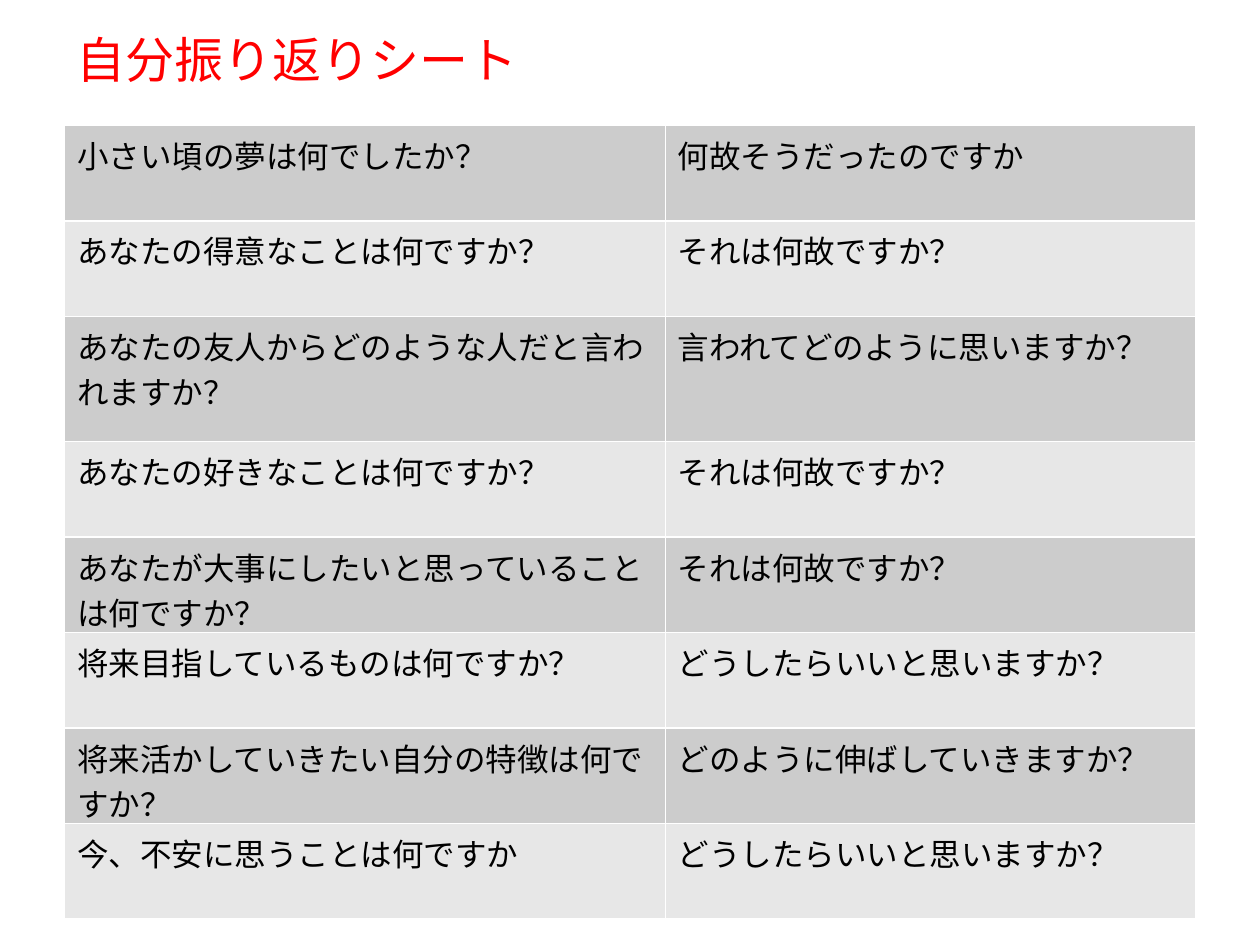
from dataclasses import dataclass

from pptx import Presentation
from pptx.dml.color import RGBColor
from pptx.enum.text import MSO_AUTO_SIZE
from pptx.util import Cm, Pt

GROW = MSO_AUTO_SIZE.SHAPE_TO_FIT_TEXT


@dataclass(frozen=True)
class Theme:
    red: str = "FF0000"
    ink: str = "000000"
    bands: tuple = ("CCCCCC", "E7E7E7")
    head: int = 28
    body: int = 18
    face: str = "Noto Sans CJK JP"
    text: str = "Calibri"


THEME = Theme()
ROWS = [
    ("小さい頃の夢は何でしたか？", "何故そうだったのですか"),
    ("あなたの得意なことは何ですか？", "それは何故ですか？"),
    ("あなたの友人からどのような人だと言われますか？", "言われてどのように思いますか？"),
    ("あなたの好きなことは何ですか？", "それは何故ですか？"),
    ("あなたが大事にしたいと思っていることは何ですか？", "それは何故ですか？"),
    ("将来目指しているものは何ですか？", "どうしたらいいと思いますか？"),
    ("将来活かしていきたい自分の特徴は何ですか？", "どのように伸ばしていきますか？"),
    ("今、不安に思うことは何ですか", "どうしたらいいと思いますか？"),
]
TALL = 2
EXTRA = 0.6
SPLIT = 0.531


def write(frame, text, size, color, face):
    line = frame.paragraphs[0]
    line.text = text
    font = line.font
    font.size = Pt(size)
    font.name = face
    font.color.rgb = RGBColor.from_string(color)


def add_title(slide, left, top, width, height):
    box = slide.shapes.add_textbox(Cm(left), Cm(top), Cm(width), Cm(height))
    frame = box.text_frame
    frame.word_wrap = True
    frame.auto_size = GROW
    write(frame, "自分振り返りシート", THEME.head, THEME.red, THEME.face)


def add_sheet(slide, left, top, width, height):
    shape = slide.shapes.add_table(
        len(ROWS), 2, Cm(left), Cm(top), Cm(width), Cm(height))
    table = shape.table
    table.first_row = False
    for col, share in zip(table.columns, (SPLIT, 1 - SPLIT)):
        col.width = Cm(width * share)
    base = (height - EXTRA) / len(ROWS)
    for i, texts in enumerate(ROWS):
        table.rows[i].height = Cm(base + EXTRA * (i == TALL))
        for j, text in enumerate(texts):
            cell = table.cell(i, j)
            cell.fill.solid()
            cell.fill.fore_color.rgb = RGBColor.from_string(THEME.bands[i % 2])
            write(cell.text_frame, text, THEME.body, THEME.ink, THEME.text)


def main():
    deck = Presentation()
    deck.slide_width, deck.slide_height = Cm(25.4), Cm(19.05)
    slide = deck.slides.add_slide(deck.slide_layouts[6])
    add_title(slide, 1.3, 0.48, 15.6, 1.45)
    add_sheet(slide, 1.3, 2.53, 22.81, 16)
    deck.save("out.pptx")


if __name__ == "__main__":
    main()
